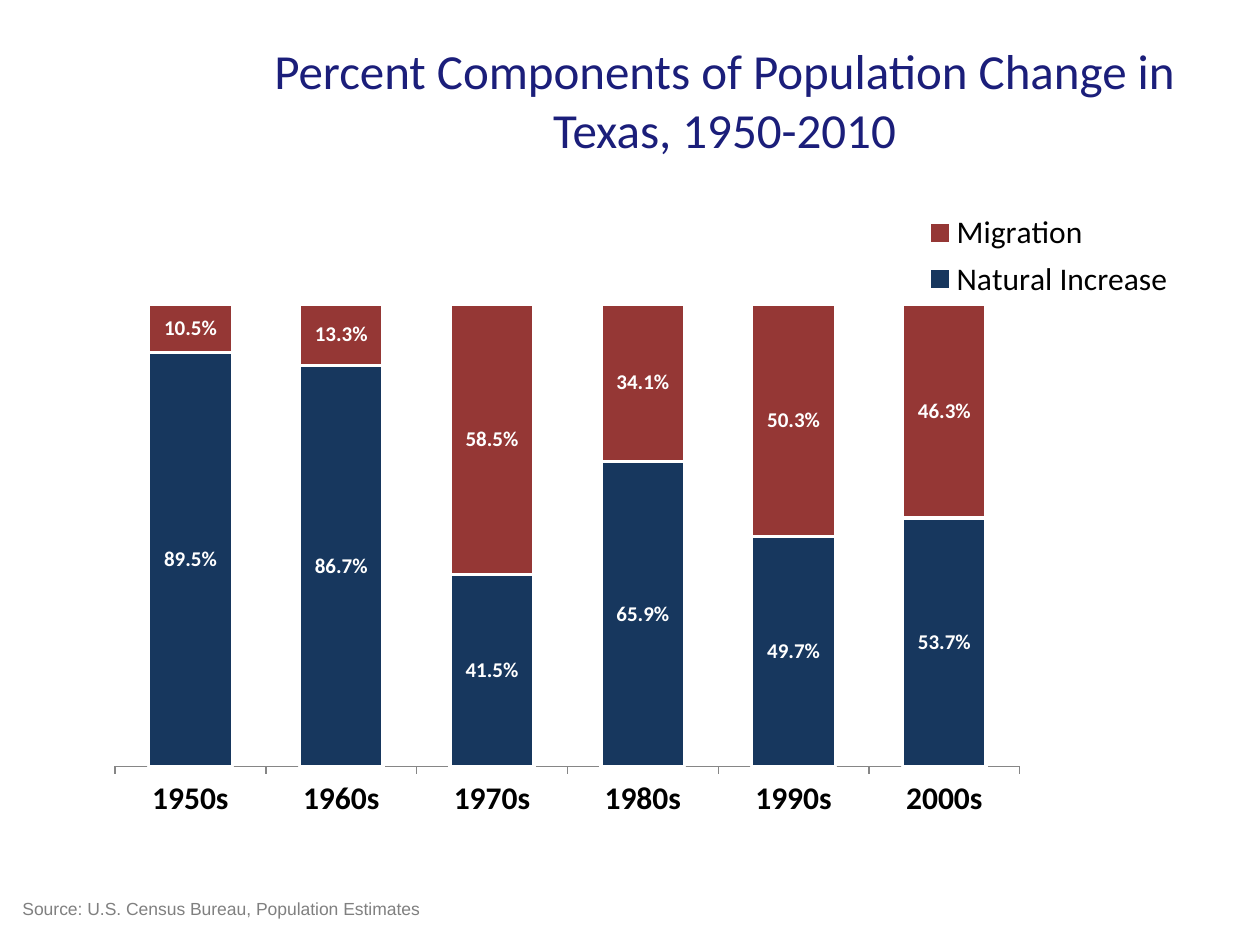
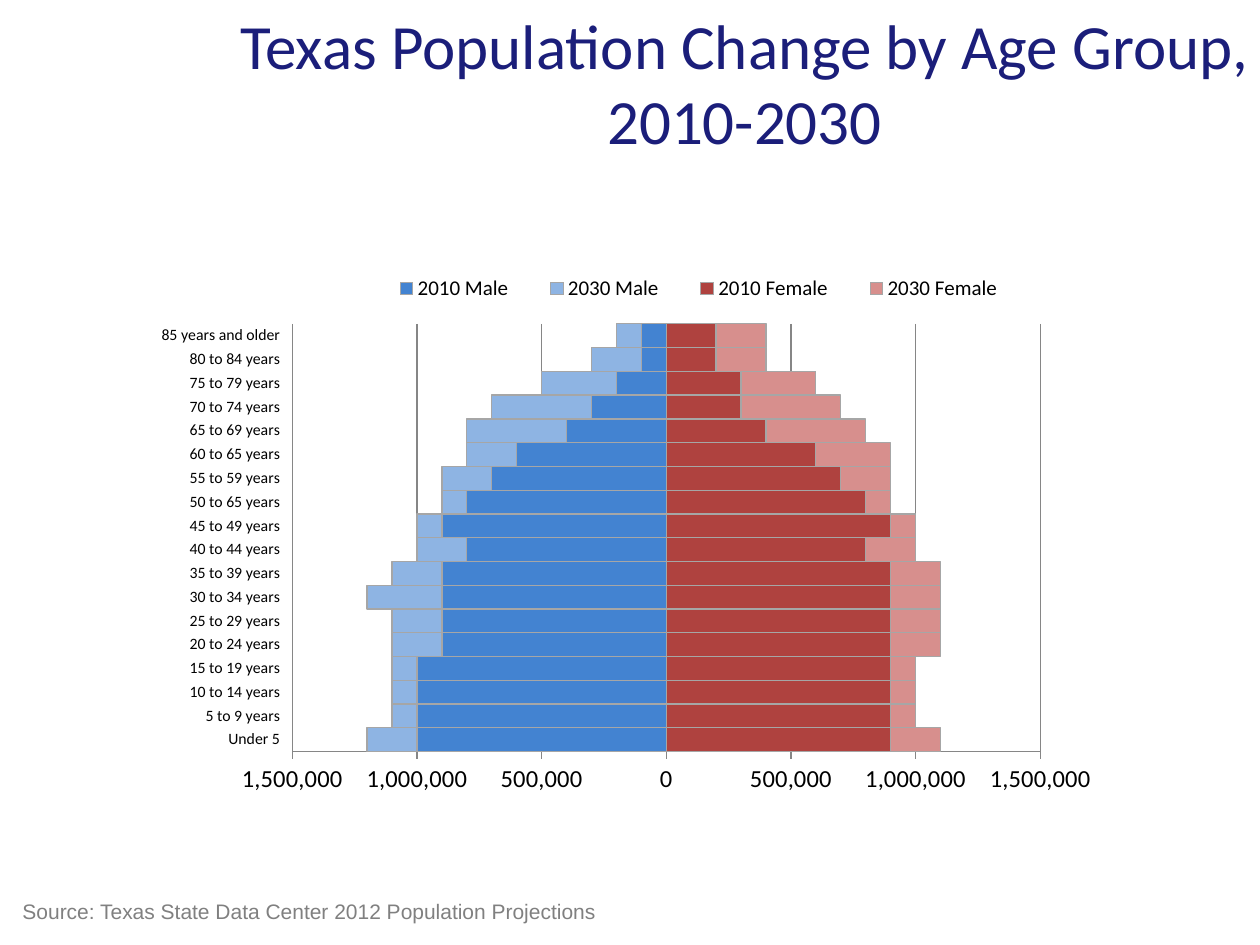
from lxml import etree
from pptx import Presentation
from pptx.chart.data import CategoryChartData
from pptx.dml.color import RGBColor
from pptx.enum.chart import XL_CHART_TYPE, XL_LEGEND_POSITION, XL_TICK_LABEL_POSITION, XL_TICK_MARK
from pptx.enum.text import MSO_ANCHOR, PP_ALIGN
from pptx.oxml.ns import qn
from pptx.util import Inches, Pt

COLUMNS, BARS = XL_CHART_TYPE.COLUMN_STACKED, XL_CHART_TYPE.BAR_STACKED
RIGHT, TOP = XL_LEGEND_POSITION.RIGHT, XL_LEGEND_POSITION.TOP
LOW = XL_TICK_LABEL_POSITION.LOW
OUTSIDE, NO_TICK = XL_TICK_MARK.OUTSIDE, XL_TICK_MARK.NONE
ANCHOR_TOP, ANCHOR_MIDDLE = MSO_ANCHOR.TOP, MSO_ANCHOR.MIDDLE
LEFT, CENTER = PP_ALIGN.LEFT, PP_ALIGN.CENTER

HEX = {
    "title": "1B1E7A", "source": "808080", "text": "000000", "white": "FFFFFF",
    "axis": "868686", "outline": "A6A6A6",
    "Natural Increase": "17375E", "Migration": "953735",
    "2010 Male": "4383D1", "2030 Male": "8EB4E3",
    "2010 Female": "AF423F", "2030 Female": "D78F8D",
}
COLORS = {name: RGBColor.from_string(value) for name, value in HEX.items()}
STYLES = {"title": ("Calibri", CENTER), "source": ("Arial", LEFT)}


def add_text(slide, style, text, box, size, anchor=ANCHOR_TOP):
    frame = slide.shapes.add_textbox(*map(Inches, box)).text_frame
    frame.word_wrap = True
    frame.vertical_anchor = anchor
    frame.text = text
    paragraph = frame.paragraphs[0]
    face, paragraph.alignment = STYLES[style]
    font = paragraph.runs[0].font
    font.name, font.size = face, Pt(size)
    font.color.rgb = COLORS[style]


def add_stacked_chart(slide, kind, box, categories, series, number_format, gap, outline,
                      legend_position, legend_size, plot_area, legend_area):
    data = CategoryChartData(number_format=number_format)
    data.categories = categories
    for name, values in series.items():
        data.add_series(name, values)
    chart = slide.shapes.add_chart(kind, *map(Inches, box), data).chart
    chart.has_title = False
    chart.font.name, chart.font.size = "Calibri", Pt(18)
    chart.font.color.rgb = COLORS["text"]
    plot = chart.plots[0]
    plot.gap_width, plot.overlap = gap, 100
    plot.vary_by_categories = False
    for part in plot.series:
        part.invert_if_negative = False
        part.format.fill.solid()
        part.format.fill.fore_color.rgb = COLORS[part.name]
        part.format.line.color.rgb = COLORS[outline[0]]
        part.format.line.width = Pt(outline[1])
    for axis in (chart.category_axis, chart.value_axis):
        axis.major_tick_mark, axis.minor_tick_mark = OUTSIDE, NO_TICK
        axis.format.line.color.rgb = COLORS["axis"]
        axis.format.line.width = Pt(0.75)
        axis.has_major_gridlines = False
    chart.has_legend = True
    legend = chart.legend
    legend.position, legend.include_in_layout = legend_position, False
    legend.font.name, legend.font.size = "Calibri", Pt(legend_size)

    plot_element = chart._chartSpace.chart.plotArea
    legend_element = chart._chartSpace.chart.find(qn("c:legend"))
    for parent, area, index in ((plot_element, plot_area, 0), (legend_element, legend_area, 1)):
        for old in parent.findall(qn("c:layout")):
            parent.remove(old)
        layout = etree.Element(qn("c:layout"))
        manual = etree.SubElement(layout, qn("c:manualLayout"))
        settings = [("xMode", "edge"), ("yMode", "edge"), *zip("xywh", area)]
        if parent is plot_element:
            settings.insert(0, ("layoutTarget", "inner"))
        for tag, value in settings:
            etree.SubElement(manual, qn(f"c:{tag}")).set("val", str(value))
        parent.insert(index, layout)
    return chart


prs = Presentation()
prs.slide_width, prs.slide_height = Inches(10), Inches(7.5)
blank = prs.slide_layouts[6]

components_slide = prs.slides.add_slide(blank)
decades = [f"{year}s" for year in range(1950, 2001, 10)]
natural_increase = [0.895, 0.867, 0.415, 0.659, 0.497, 0.537]
components = {
    "Natural Increase": natural_increase,
    "Migration": [round(1 - share, 3) for share in natural_increase],
}
components_chart = add_stacked_chart(
    components_slide, COLUMNS, (0.72, 1.58, 9.69, 5.01), decades, components, "0.0%",
    80, ("white", 2), RIGHT, 18, (0.02, 0.166, 0.741, 0.733), (0.68, 0.01, 0.21, 0.16))
decade_font = components_chart.category_axis.tick_labels.font
decade_font.name, decade_font.size, decade_font.bold = "Calibri", Pt(18), True
share_axis = components_chart.value_axis
share_axis.minimum_scale, share_axis.maximum_scale = 0, 1
share_axis.visible = False
for component in components_chart.plots[0].series:
    labels = component.data_labels
    labels.show_value = True
    labels.number_format, labels.number_format_is_linked = "0.0%", False
    labels.font.name, labels.font.size, labels.font.bold = "Calibri", Pt(12), True
    labels.font.color.rgb = COLORS["white"]
add_text(components_slide, "title", "Percent Components of Population Change in Texas, 1950-2010",
         (2, 0.25, 7.5, 1.08), 28, ANCHOR_MIDDLE)
add_text(components_slide, "source", "Source: U.S. Census Bureau, Population Estimates",
         (0.08, 7.08, 5, 0.27), 10)

pyramid_slide = prs.slides.add_slide(blank)
age_groups = [
    "Under 5", "5 to 9 years", "10 to 14 years", "15 to 19 years", "20 to 24 years",
    "25 to 29 years", "30 to 34 years", "35 to 39 years", "40 to 44 years",
    "45 to 49 years", "50 to 65 years", "55 to 59 years", "60 to 65 years",
    "65 to 69 years", "70 to 74 years", "75 to 79 years", "80 to 84 years",
    "85 years and older",
]
hundred_thousands = {
    "2010 Male": [-10, -10, -10, -10, -9, -9, -9, -9, -8, -9, -8, -7, -6, -4, -3, -2, -1, -1],
    "2030 Male": [-2, -1, -1, -1, -2, -2, -3, -2, -2, -1, -1, -2, -2, -4, -4, -3, -2, -1],
    "2010 Female": [9, 9, 9, 9, 9, 9, 9, 9, 8, 9, 8, 7, 6, 4, 3, 3, 2, 2],
    "2030 Female": [2, 1, 1, 1, 2, 2, 2, 2, 2, 1, 1, 2, 3, 4, 4, 3, 2, 2],
}
population = {name: [count * 100000 for count in counts]
              for name, counts in hundred_thousands.items()}
pyramid_chart = add_stacked_chart(
    pyramid_slide, BARS, (1.13, 2.14, 7.68, 4.26), age_groups, population, "#,##0;#,##0",
    0, ("outline", 0.75), TOP, 12, (0.155, 0.101, 0.773, 0.797), (0.23, 0, 0.69, 0.07))
age_axis = pyramid_chart.category_axis
age_axis.tick_label_position = LOW
age_axis.tick_labels.font.name, age_axis.tick_labels.font.size = "Calibri", Pt(9)
people_axis = pyramid_chart.value_axis
people_axis.minimum_scale, people_axis.maximum_scale = -1500000, 1500000
people_axis.major_unit = 500000
people_axis.has_major_gridlines = True
people_axis.major_gridlines.format.line.color.rgb = COLORS["axis"]
people_labels = people_axis.tick_labels
people_labels.number_format, people_labels.number_format_is_linked = "#,##0;#,##0", False
people_labels.font.name, people_labels.font.size = "Calibri", Pt(14)
people_labels.font.color.rgb = COLORS["text"]
add_text(pyramid_slide, "title", "Texas Population Change by Age Group, 2010-2030",
         (1.67, 0, 8.48, 0.67), 36)
add_text(pyramid_slide, "source", "Source: Texas State Data Center 2012 Population Projections",
         (0.08, 7.08, 9.58, 0.3), 12)

prs.save("out.pptx")
